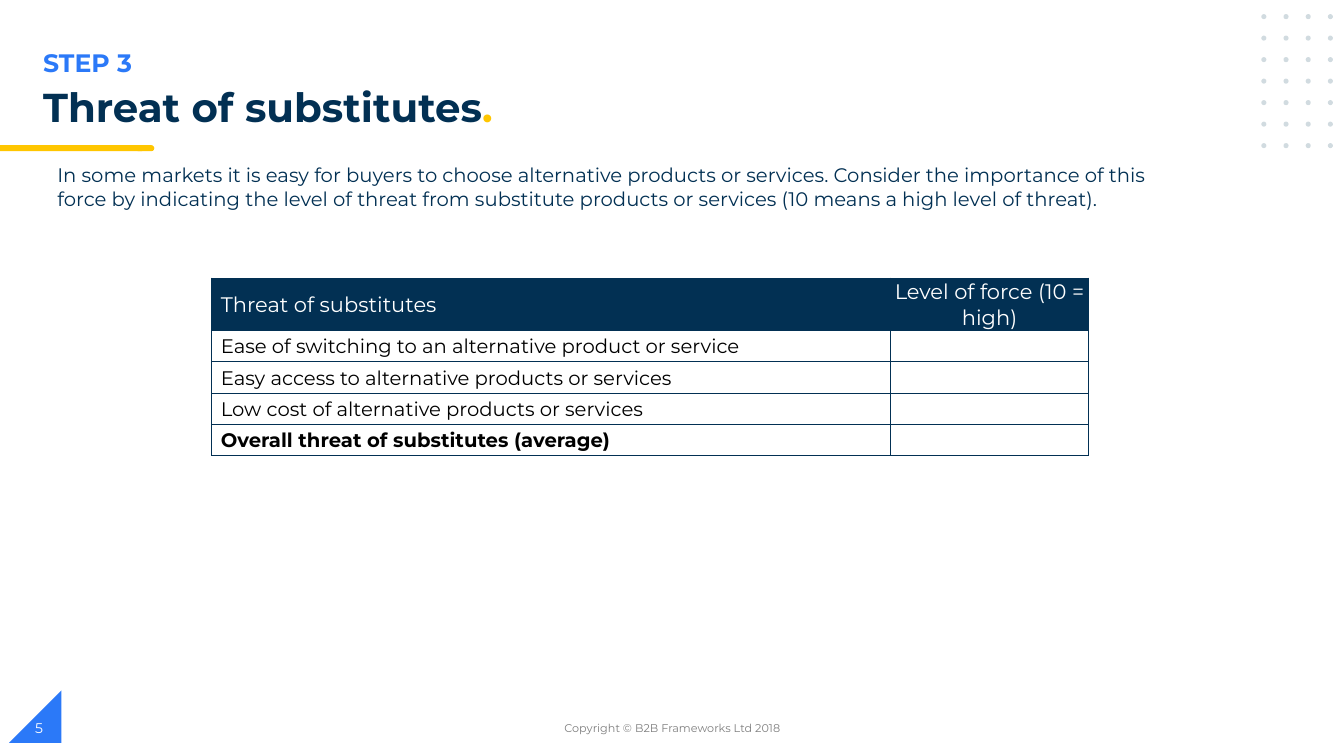
from lxml import etree
from pptx import Presentation, util as u
from pptx.dml.color import RGBColor
from pptx.enum import shapes, text
from pptx.oxml.ns import qn

THEME = {
    "font": "Montserrat",
    "navy": "023053", "blue": "2B79F8", "yellow": "FFC600", "dots": "D1DBE0",
    "grey": "7F7F7F", "white": "FFFFFF", "black": "000000",
    "step": 18, "title": 28.8, "header": 15, "body": 14, "footer": 8, "number": 10,
}
LEFT, CENTER = text.PP_ALIGN.LEFT, text.PP_ALIGN.CENTER
TOP, MIDDLE, BOTTOM = text.MSO_ANCHOR.TOP, text.MSO_ANCHOR.MIDDLE, text.MSO_ANCHOR.BOTTOM

INTRO = ("In some markets it is easy for buyers to choose alternative products or services. "
         "Consider the importance of this force by indicating the level of threat from "
         "substitute products or services (10 means a high level of threat).")
# box, runs as (wording, colour), size, bold, alignment, anchor, line spacing
TEXTS = [
    ((0.33, 0.42, 6.69, 0.4), [("STEP 3", "blue")], "step", True, LEFT, TOP, 1.0),
    ((0.33, 0.82, 9.03, 0.56), [("Threat of substitutes", "navy"), (".", "yellow")],
     "title", True, LEFT, TOP, 0.9),
    ((0.47, 1.57, 11.35, 0.57), [(INTRO, "navy")], "body", False, LEFT, TOP, 1.0),
    ((4.42, 7.02, 4.5, 0.4), [("Copyright © B2B Frameworks Ltd 2018", "grey")],
     "footer", False, CENTER, MIDDLE, 1.0),
    ((0.25, 7.02, 3, 0.4), [("5", "white")], "number", False, LEFT, MIDDLE, 1.0),
]
TABLE_ROWS = [
    ("Threat of substitutes", "Level of force (10 = high)"),
    ("Ease of switching to an alternative product or service", ""),
    ("Easy access to alternative products or services", ""),
    ("Low cost of alternative products or services", ""),
    ("Overall threat of substitutes (average)", ""),
]
TABLE_LEFT, TABLE_TOP = 2.1, 2.76
COLUMN_WIDTHS = (6.73, 1.97)
HEADER_HEIGHT, ROW_HEIGHT = 0.52, 0.31
DOT_COLUMNS, DOT_ROWS, DOT_SIZE = 4, 7, 0.05
DOT_LEFT, DOT_TOP, DOT_STEP_X, DOT_STEP_Y = 12.51, 0.14, 0.22, 1.28 / 6


def color(name):
    return RGBColor.from_string(THEME[name])


def inches(box):
    return [u.Inches(value) for value in box]


def add_filled(slide, kind, box, fill):
    shape = slide.shapes.add_shape(kind, *inches(box))
    shape.shadow.inherit = False
    shape.fill.solid()
    shape.fill.fore_color.rgb = color(fill)
    shape.line.fill.background()
    return shape


def add_run(paragraph, wording, size, fill, bold):
    run = paragraph.add_run()
    run.text = wording
    font_values = {"name": THEME["font"], "size": u.Pt(THEME[size]), "bold": bold}
    for name, value in font_values.items():
        setattr(run.font, name, value)
    run.font.color.rgb = color(fill)


def add_text(slide, box, runs, size, bold, alignment, anchor, spacing):
    frame = slide.shapes.add_textbox(*inches(box)).text_frame
    frame.word_wrap = True
    frame.vertical_anchor = anchor
    paragraph = frame.paragraphs[0]
    paragraph.alignment = alignment
    paragraph.line_spacing = spacing
    for wording, fill in runs:
        add_run(paragraph, wording, size, fill, bold)


def add_borders(cell):
    properties = cell._tc.get_or_add_tcPr()
    for side in ("lnL", "lnR", "lnT", "lnB"):
        line = etree.SubElement(properties, qn(f"a:{side}"), w=str(u.Pt(1)))
        fill = etree.SubElement(line, qn("a:solidFill"))
        etree.SubElement(fill, qn("a:srgbClr"), val=THEME["navy"])


def fill_cell(cell, wording, row, column):
    is_header, is_total = row == 0, row == len(TABLE_ROWS) - 1
    cell_values = {
        "margin_left": u.Inches(0.01 if column else 0.09), "margin_right": u.Inches(0.01),
        "margin_top": u.Inches(0.01), "margin_bottom": 0,
        "vertical_anchor": BOTTOM if column else MIDDLE,
    }
    for name, value in cell_values.items():
        setattr(cell, name, value)
    add_borders(cell)
    if is_header:
        cell.fill.solid()
        cell.fill.fore_color.rgb = color("navy")
    else:
        cell.fill.background()
    paragraph = cell.text_frame.paragraphs[0]
    paragraph.alignment = CENTER if column else LEFT
    if wording:
        add_run(paragraph, wording, "header" if is_header else "body",
                "white" if is_header else "black", is_total)


def add_threat_table(slide):
    heights = [HEADER_HEIGHT] + [ROW_HEIGHT] * (len(TABLE_ROWS) - 1)
    box = (TABLE_LEFT, TABLE_TOP, sum(COLUMN_WIDTHS), sum(heights))
    table = slide.shapes.add_table(len(heights), len(COLUMN_WIDTHS), *inches(box)).table
    table.first_row = table.horz_banding = False
    for column, width in zip(table.columns, COLUMN_WIDTHS):
        column.width = u.Inches(width)
    for row, (height, wordings) in enumerate(zip(heights, TABLE_ROWS)):
        table.rows[row].height = u.Inches(height)
        for column, wording in enumerate(wordings):
            fill_cell(table.cell(row, column), wording, row, column)


def add_decoration(slide):
    kinds = shapes.MSO_SHAPE
    corner = add_filled(slide, kinds.RIGHT_TRIANGLE, (0.09, 6.85, 0.52, 0.52), "blue")
    corner._element.spPr.xfrm.set("flipH", "1")
    for row in range(DOT_ROWS):
        for column in range(DOT_COLUMNS):
            box = (DOT_LEFT + column * DOT_STEP_X, DOT_TOP + row * DOT_STEP_Y,
                   DOT_SIZE, DOT_SIZE)
            add_filled(slide, kinds.OVAL, box, "dots")
    add_filled(slide, kinds.FLOWCHART_TERMINATOR, (1.34, 1.44, 0.19, 0.06), "yellow")
    add_filled(slide, kinds.RECTANGLE, (0, 1.44, 1.41, 0.06), "yellow")


def main():
    presentation = Presentation()
    presentation.slide_width, presentation.slide_height = inches((13.33, 7.5))
    slide = presentation.slides.add_slide(presentation.slide_layouts[6])
    add_decoration(slide)
    for entry in TEXTS:
        add_text(slide, *entry)
    add_threat_table(slide)
    presentation.save("out.pptx")


if __name__ == "__main__":
    main()
